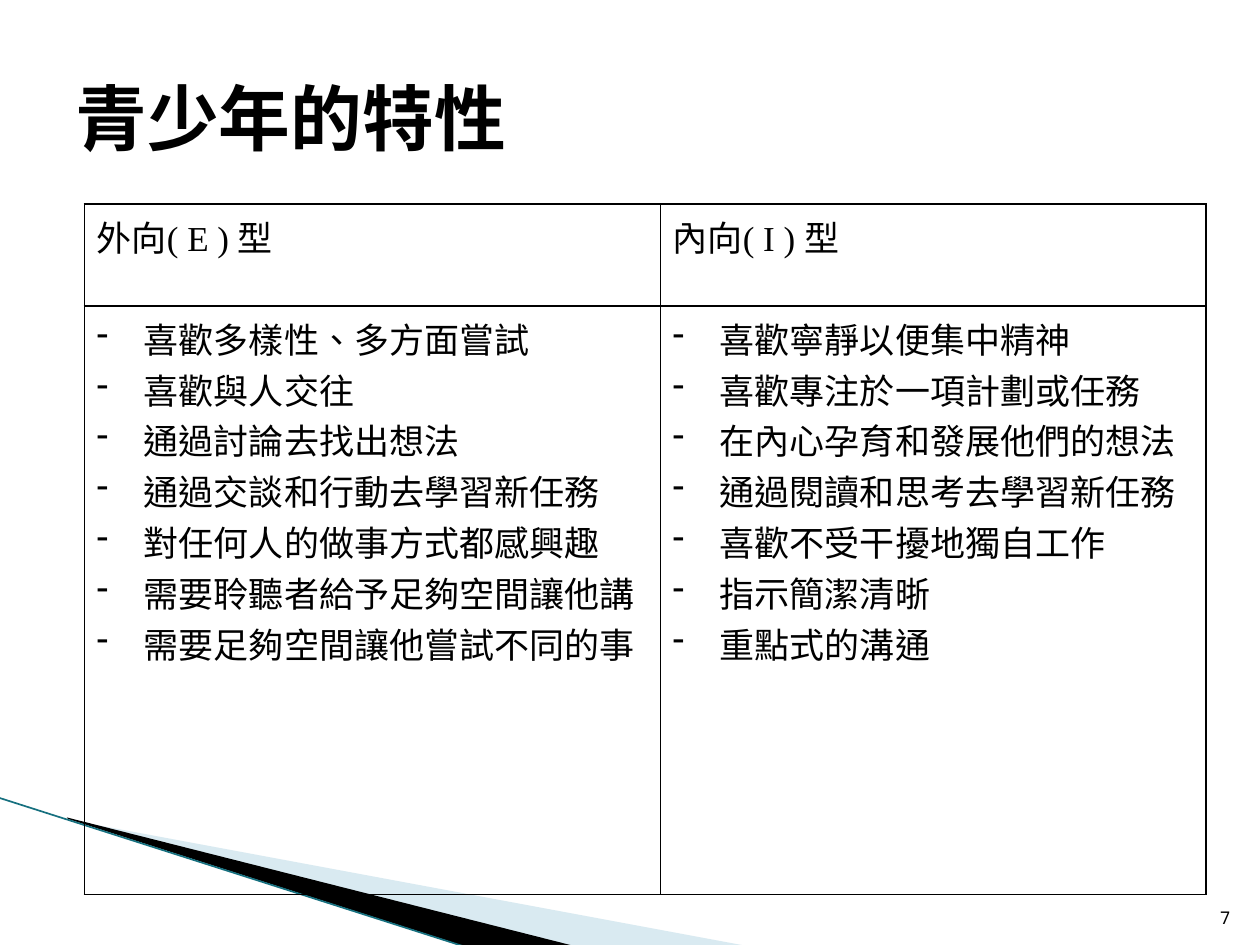
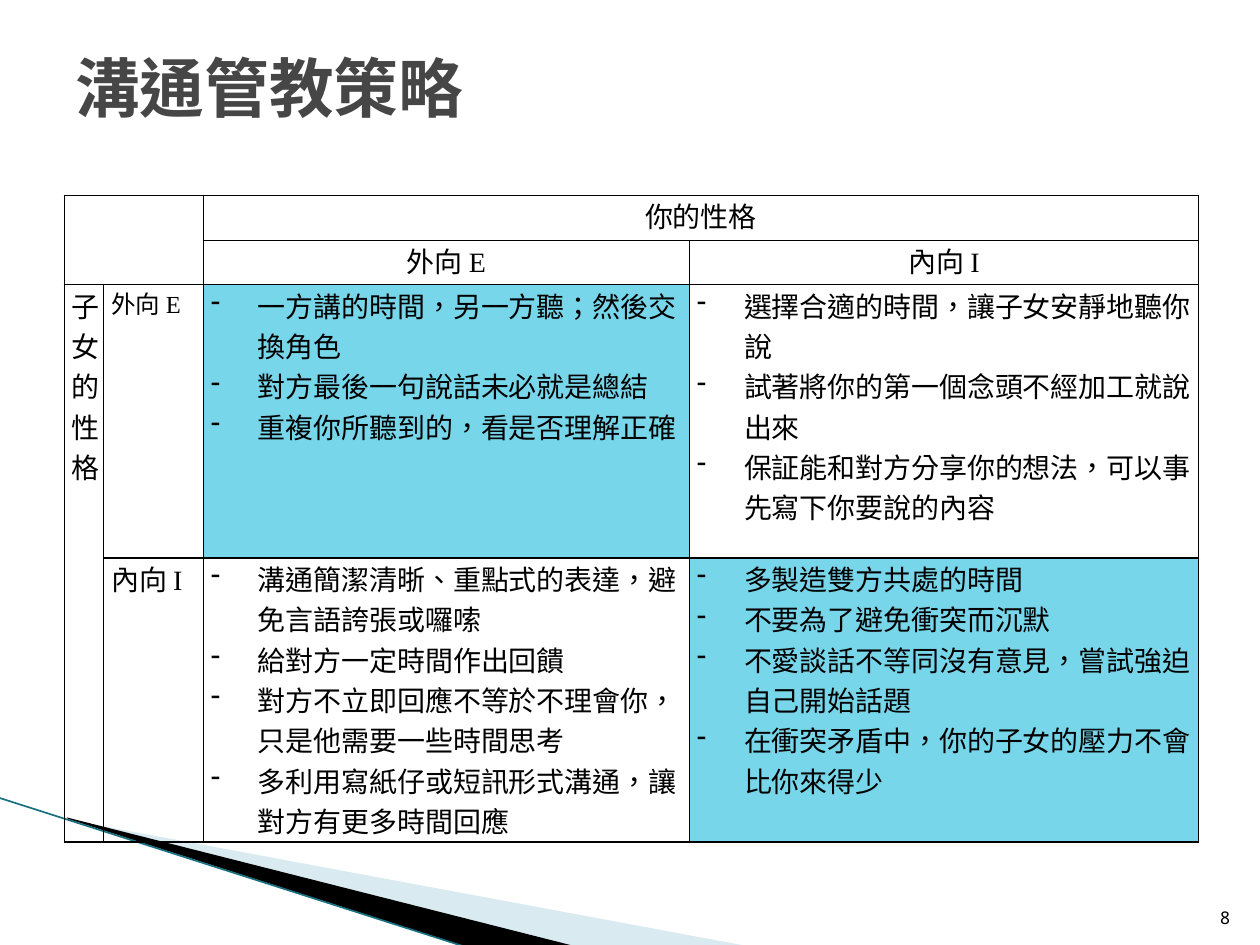
from dataclasses import dataclass
from typing import NamedTuple

from lxml import etree
from pptx import Presentation
from pptx.dml.color import RGBColor
from pptx.enum.lang import MSO_LANGUAGE_ID
from pptx.enum.shapes import MSO_CONNECTOR
from pptx.enum.text import MSO_ANCHOR, PP_ALIGN
from pptx.oxml.ns import qn
from pptx.util import Cm, Pt

STRAIGHT = MSO_CONNECTOR.STRAIGHT
MIDDLE, BOTTOM = MSO_ANCHOR.MIDDLE, MSO_ANCHOR.BOTTOM
LEFT, CENTER, RIGHT = PP_ALIGN.LEFT, PP_ALIGN.CENTER, PP_ALIGN.RIGHT
CHINESE = MSO_LANGUAGE_ID.TRADITIONAL_CHINESE

MONO = "Noto Sans Mono"
SERIF = "Times New Roman"
COLORS = {
    "ink": "000000",
    "title_gray": "464646",
    "pale_wedge": "A0CBDC",
    "edge": "16707F",
    "same_type": "78D6EA",
}
BULLET_INDENT = Cm(0.95)


class Wedge(NamedTuple):
    points: list[tuple[float, float]]
    color: str
    opacity: int


class Title(NamedTuple):
    text: str
    height: float
    size: float
    color: str


class Line(NamedTuple):
    """One paragraph: an optional lead in the mono font, then the rest."""
    text: str
    mono: str = ""


@dataclass
class Entry:
    row: int
    col: int
    lines: list[Line]
    size: float
    align: PP_ALIGN = LEFT
    bulleted: bool = False
    fill: str = ""


@dataclass
class Grid:
    left: float
    top: float
    cols: list[float]
    rows: list[float]
    entries: list[Entry]
    merges: list[tuple[int, int, int, int]]
    margins: tuple[float, float]


WEDGES = [
    Wedge([(1.4, 16.53), (15.11, 19.08), (11.58, 19.08), (1.4, 16.51)], "pale_wedge", 40),
    Wedge([(1.35, 16.48), (11.61, 19.08), (9.45, 19.1), (1.37, 16.51)], "ink", 100),
]


def rgb(color: str) -> RGBColor:
    return RGBColor.from_string(COLORS[color])


def format_run(run, font_name: str, size: float, color: str = "ink", bold: bool = False) -> None:
    font = run.font
    font.name, font.size, font.bold = font_name, Pt(size), bold
    font.color.rgb = rgb(color)
    font.language_id = CHINESE


def add_label(slide, box: tuple[float, float, float, float], text: str, size: float,
              anchor: MSO_ANCHOR, align: PP_ALIGN, color: str = "ink", bold: bool = False) -> None:
    frame = slide.shapes.add_textbox(*map(Cm, box)).text_frame
    frame.word_wrap = True
    frame.vertical_anchor = anchor
    frame.text = text
    paragraph = frame.paragraphs[0]
    paragraph.alignment = align
    format_run(paragraph.runs[0], MONO, size, color, bold)


def add_corner(slide) -> None:
    """Draw the wedges and the thin edge in the lower left corner."""
    for wedge in WEDGES:
        start, *others = [(Cm(x), Cm(y)) for x, y in wedge.points]
        builder = slide.shapes.build_freeform(*start)
        builder.add_line_segments(others)
        shape = builder.convert_to_shape()
        shape.shadow.inherit = False
        shape.line.fill.background()
        shape.fill.solid()
        shape.fill.fore_color.rgb = rgb(wedge.color)
        if wedge.opacity < 100:
            color = shape.fill._xPr.find(".//" + qn("a:srgbClr"))
            etree.SubElement(color, qn("a:alpha"), val=str(wedge.opacity * 1000))
    edge = slide.shapes.add_connector(STRAIGHT, Cm(-0.03), Cm(16.08), Cm(9.42), Cm(19.1))
    edge.line.color.rgb = rgb("edge")
    edge.line.width = Pt(0.95)
    etree.SubElement(edge._element.spPr, qn("a:effectLst"))


def add_borders(cell) -> None:
    properties = cell._tc.get_or_add_tcPr()
    for side in ("lnL", "lnR", "lnT", "lnB"):
        border = etree.SubElement(properties, qn(f"a:{side}"), w=str(Pt(1)))
        solid = etree.SubElement(border, qn("a:solidFill"))
        etree.SubElement(solid, qn("a:srgbClr"), val=COLORS["ink"])


def add_dash(paragraph) -> None:
    properties = paragraph._p.get_or_add_pPr()
    properties.set("marL", str(BULLET_INDENT))
    properties.set("indent", str(-BULLET_INDENT))
    etree.SubElement(properties, qn("a:buChar"), char="-")


def fill_entry(cell, entry: Entry) -> None:
    frame = cell.text_frame
    for index, line in enumerate(entry.lines):
        paragraph = frame.add_paragraph() if index else frame.paragraphs[0]
        paragraph.alignment = entry.align
        if entry.bulleted:
            add_dash(paragraph)
        for text, font_name in ((line.mono, MONO), (line.text, SERIF)):
            if text:
                run = paragraph.add_run()
                run.text = text
                format_run(run, font_name, entry.size)
    if entry.fill:
        cell.fill.solid()
        cell.fill.fore_color.rgb = rgb(entry.fill)


def add_grid(slide, grid: Grid) -> None:
    table = slide.shapes.add_table(
        len(grid.rows), len(grid.cols), Cm(grid.left), Cm(grid.top),
        Cm(sum(grid.cols)), Cm(sum(grid.rows))).table
    table.first_row = table.horz_banding = False
    for column, width in zip(table.columns, grid.cols):
        column.width = Cm(width)
    for row, height in zip(table.rows, grid.rows):
        row.height = Cm(height)
    side, end = map(Cm, grid.margins)
    for cell in table.iter_cells():
        cell.margin_left = cell.margin_right = side
        cell.margin_top = cell.margin_bottom = end
        add_borders(cell)
        cell.fill.background()
    for top, left, bottom, right in grid.merges:
        table.cell(top, left).merge(table.cell(bottom, right))
    for entry in grid.entries:
        fill_entry(table.cell(entry.row, entry.col), entry)


def add_page(deck, number: int, title: Title, grid: Grid) -> None:
    slide = deck.slides.add_slide(deck.slide_layouts[6])
    add_corner(slide)
    add_label(slide, (1.27, 0.76, 22.86, title.height), title.text, title.size,
              MIDDLE, LEFT, title.color, bold=True)
    add_grid(slide, grid)
    add_label(slide, (24.03, 17.81, 1.02, 1.02), str(number), 10, BOTTOM, RIGHT)


TRAITS = Grid(
    left=1.7, top=4.11, cols=[11.61, 11], rows=[2.06, 11.86], merges=[], margins=(0.25, 0.13),
    entries=[
        Entry(0, 0, [Line("外向( E ) 型")], 20),
        Entry(0, 1, [Line("內向( I ) 型")], 20),
        Entry(1, 0, [
            Line("喜歡多樣性、多方面嘗試"),
            Line("喜歡與人交往"),
            Line("通過討論去找出想法"),
            Line("通過交談和行動去學習新任務"),
            Line("對任何人的做事方式都感興趣"),
            Line("需要聆聽者給予足夠空間讓他講"),
            Line("需要足夠空間讓他嘗試不同的事"),
        ], 20, bulleted=True),
        Entry(1, 1, [
            Line("喜歡寧靜以便集中精神"),
            Line("喜歡專注於一項計劃或任務"),
            Line("在內心孕育和發展他們的想法"),
            Line("通過閱讀和思考去學習新任務"),
            Line("喜歡不受干擾地獨自工作"),
            Line("", mono="指示簡潔清晣"),
            Line("", mono="重點式的溝通"),
        ], 20, bulleted=True),
    ])

STRATEGIES = Grid(
    left=1.3, top=3.94, cols=[0.79, 2.01, 9.8, 10.26], rows=[0.91, 0.89, 5.51, 5.72],
    merges=[(0, 0, 1, 1), (0, 2, 0, 3), (2, 0, 3, 0)], margins=(0.15, 0),
    entries=[
        Entry(0, 2, [Line("你的性格")], 16, CENTER),
        Entry(1, 2, [Line("外向 E")], 16, CENTER),
        Entry(1, 3, [Line("內向 I")], 16, CENTER),
        Entry(2, 0, [Line("子女的性格")], 16),
        Entry(2, 1, [Line("外向 E")], 14),
        Entry(3, 1, [Line("內向 I")], 16),
        Entry(2, 2, [
            Line("一方講的時間，另一方聽；然後交換角色"),
            Line("對方最後一句說話未必就是總結"),
            Line("重複你所聽到的，看是否理解正確"),
        ], 16, bulleted=True, fill="same_type"),
        Entry(2, 3, [
            Line("選擇合適的時間，讓子女安靜地聽你說"),
            Line("試著將你的第一個念頭不經加工就說出來"),
            Line("保証能和對方分享你的想法，可以事先寫下你要說的內容"),
        ], 16, bulleted=True),
        Entry(3, 2, [
            Line("避免言語誇張或囉嗦", mono="溝通簡潔清晣、重點式的表達，"),
            Line("給對方一定時間作出回饋"),
            Line("對方不立即回應不等於不理會你，只是他需要一些時間思考"),
            Line("多利用寫紙仔或短訊形式溝通，讓對方有更多時間回應"),
        ], 16, bulleted=True),
        Entry(3, 3, [
            Line("多製造雙方共處的時間"),
            Line("不要為了避免衝突而沉默"),
            Line("不愛談話不等同沒有意見，嘗試強迫自己開始話題"),
            Line("在衝突矛盾中，你的子女的壓力不會比你來得少"),
        ], 16, bulleted=True, fill="same_type"),
    ])


def main() -> None:
    deck = Presentation()
    deck.slide_width, deck.slide_height = Cm(25.4), Cm(19.05)
    add_page(deck, 7, Title("青少年的特性", 3.18, 41, "ink"), TRAITS)
    add_page(deck, 8, Title("溝通管教策略", 1.96, 36.9, "title_gray"), STRATEGIES)
    deck.save("out.pptx")


if __name__ == "__main__":
    main()
